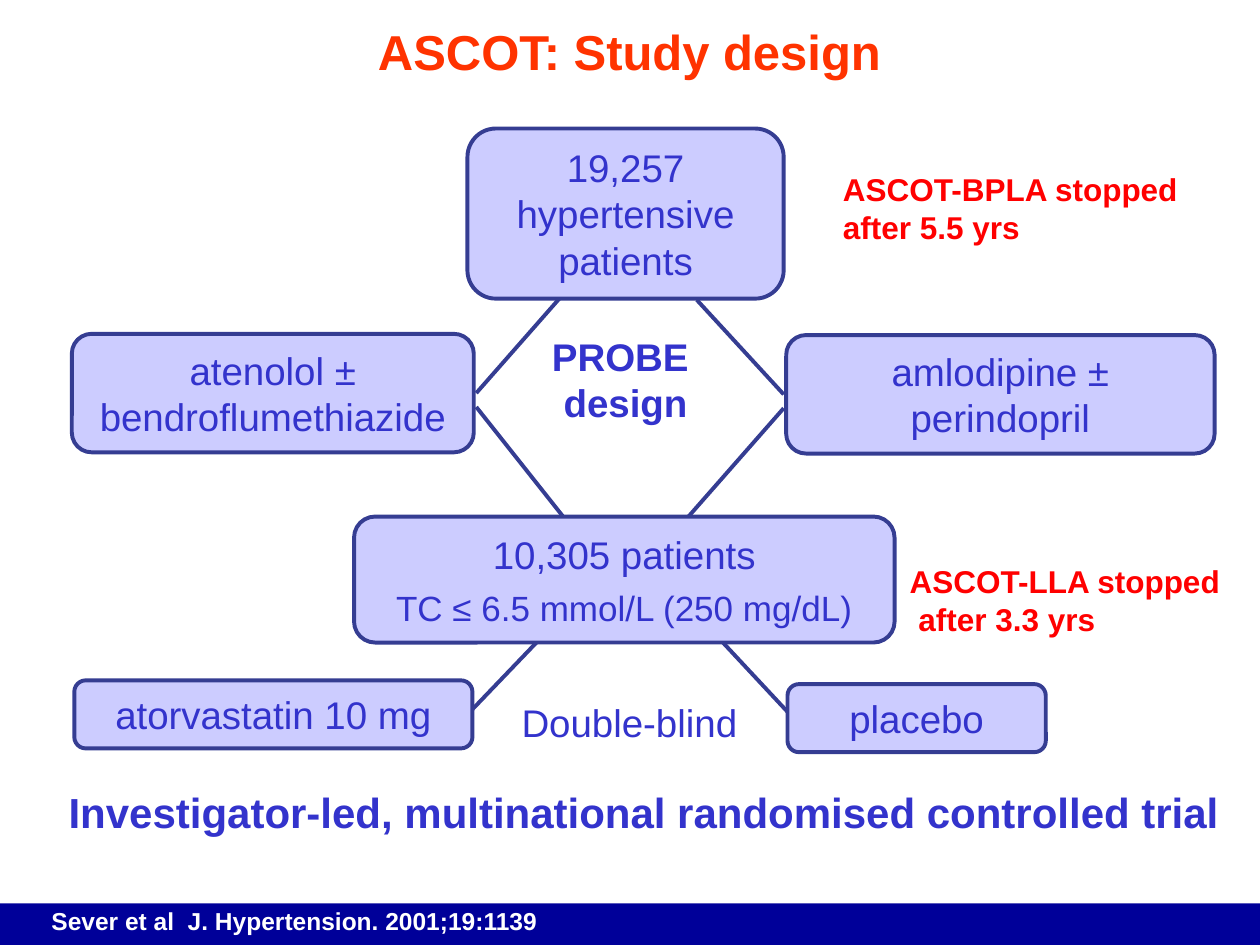
import pptx
import pptx.util
import pptx.dml.color
import pptx.enum.shapes
import pptx.enum.text
import pptx.oxml.ns
import lxml.etree

Inches = pptx.util.Inches
Pt = pptx.util.Pt
Kind = pptx.enum.shapes.MSO_SHAPE
Align = pptx.enum.text.PP_ALIGN
Anchor = pptx.enum.text.MSO_ANCHOR

BLUE, EDGE, PALE = "3333CC", "353D92", "CCCCFF"
RED, NAVY, WHITE = "FF0000", "000099", "FFFFFF"


def color(code):
    return pptx.dml.color.RGBColor.from_string(code)


def write(shape, lines, size, tint, bold=False, align=Align.CENTER,
          inset=(0.1, 0.05), anchor=Anchor.TOP, gap=0, wrap=True):
    frame = shape.text_frame
    frame.word_wrap = wrap
    frame.vertical_anchor = anchor
    frame.margin_left = frame.margin_right = Inches(inset[0])
    frame.margin_top = frame.margin_bottom = Inches(inset[1])
    for i, line in enumerate(lines):
        text, pts = line if isinstance(line, tuple) else (line, size)
        para = frame.paragraphs[0] if i == 0 else frame.add_paragraph()
        para.alignment = align
        if i:
            para.space_before = Pt(gap)
        run = para.add_run()
        run.text = text
        run.font.name = "Arial"
        run.font.size = Pt(pts)
        run.font.bold = bold
        run.font.color.rgb = color(tint)
    return frame


def place(box, part):
    left, top = box[:2]
    x, y, w, h = part
    return Inches(left + x), Inches(top + y), Inches(w), Inches(h)


def node(slide, box, part, lines, gap=0):
    shape = slide.shapes.add_shape(Kind.ROUNDED_RECTANGLE, *place(box, part))
    shape.adjustments[0] = 0.167
    shape.shadow.inherit = False
    shape.fill.solid()
    shape.fill.fore_color.rgb = color(PALE)
    shape.line.color.rgb = color(EDGE)
    shape.line.width = Pt(2.25)
    write(shape, lines, 22, BLUE, anchor=Anchor.MIDDLE, gap=gap)


def note(slide, box, part, lines, size=18, tint=RED, **style):
    label = slide.shapes.add_textbox(*place(box, part))
    style.setdefault("inset", (0.02, 0.02))
    return write(label, lines, size, tint, **style)


def link(slide, box, start, end):
    left, top = box[:2]
    line = slide.shapes.add_connector(
        pptx.enum.shapes.MSO_CONNECTOR.STRAIGHT,
        Inches(left + start[0]), Inches(top + start[1]),
        Inches(left + end[0]), Inches(top + end[1]))
    line.line.color.rgb = color(EDGE)
    line.line.width = Pt(2.25)
    props = line._element.spPr
    lxml.etree.SubElement(props, pptx.oxml.ns.qn("a:effectLst"))


def title(slide, box):
    frame = note(slide, box, (0, 0, box[2], box[3]), ["ASCOT: Study design"],
                 28, "FF3300", bold=True, inset=(0, 0), anchor=Anchor.MIDDLE)
    frame.paragraphs[0].line_spacing = 0.9


def pressure(slide, box):
    for start, end in (((4.01, 1.19), (3.21, 2.1)),
                       ((4.96, 1.36), (5.65, 2.11)),
                       ((4.01, 3.22), (3.21, 2.21)),
                       ((4.85, 3.13), (5.65, 2.22))):
        link(slide, box, start, end)
    node(slide, box, (3.14, 0, 2.51, 1.35), ["19,257 hypertensive patients"])
    node(slide, box, (0, 1.63, 3.19, 0.94), ["atenolol ± bendroflumethiazide"])
    node(slide, box, (5.67, 1.64, 3.4, 0.94), ["amlodipine ± perindopril"])
    note(slide, box, (3.79, 1.6, 1.21, 0.77), ["PROBE ", "design"],
         22, BLUE, bold=True, wrap=False)
    note(slide, box, (6.1, 0.31, 3.05, 0.64),
         ["ASCOT-BPLA stopped after 5.5 yrs"], bold=True, align=Align.LEFT)


def lipid(slide, box):
    link(slide, box, (3.84, 0.82), (3.15, 1.54))
    link(slide, box, (4.98, 0.82), (5.67, 1.56))
    node(slide, box, (2.22, 0, 4.29, 1),
         ["10,305 patients", ("TC ≤ 6.5 mmol/L (250 mg/dL)", 20)], gap=5)
    node(slide, box, (0, 1.3, 3.16, 0.54), ["atorvastatin 10 mg"])
    node(slide, box, (5.66, 1.33, 2.05, 0.54), ["placebo"])
    note(slide, box, (3.23, 1.43, 2.35, 0.41), ["Double-blind"], 22, BLUE)
    note(slide, box, (6.61, 0.34, 3.12, 0.64),
         ["ASCOT-LLA stopped", " after 3.3 yrs"], bold=True, align=Align.LEFT)


def summary(slide, box):
    note(slide, box, (0, 0, box[2], box[3]),
         ["Investigator-led, multinational randomised controlled trial"],
         24, BLUE, bold=True)


def footer(slide, box):
    band = slide.shapes.add_shape(Kind.RECTANGLE, *map(Inches, box))
    band.shadow.inherit = False
    band.fill.solid()
    band.fill.fore_color.rgb = color(NAVY)
    band.line.fill.background()
    note(slide, box, (0.31, -0.03, 9.45, 0.34),
         ["Sever et al  J. Hypertension. 2001;19:1139"], 14, WHITE,
         bold=True, align=Align.LEFT, inset=(0.1, 0.05))


def main():
    deck = pptx.Presentation()
    deck.slide_width, deck.slide_height = Inches(10), Inches(7.5)
    slide = deck.slides.add_slide(deck.slide_layouts[6])
    footer(slide, (0, 7.17, 10, 0.33))
    title(slide, (0.84, 0.2, 8.31, 0.46))
    pressure(slide, (0.57, 1.02, 9.15, 3.22))
    lipid(slide, (0.59, 4.1, 9.73, 1.87))
    summary(slide, (0.11, 6.22, 10, 0.46))
    deck.save("out.pptx")


if __name__ == "__main__":
    main()
